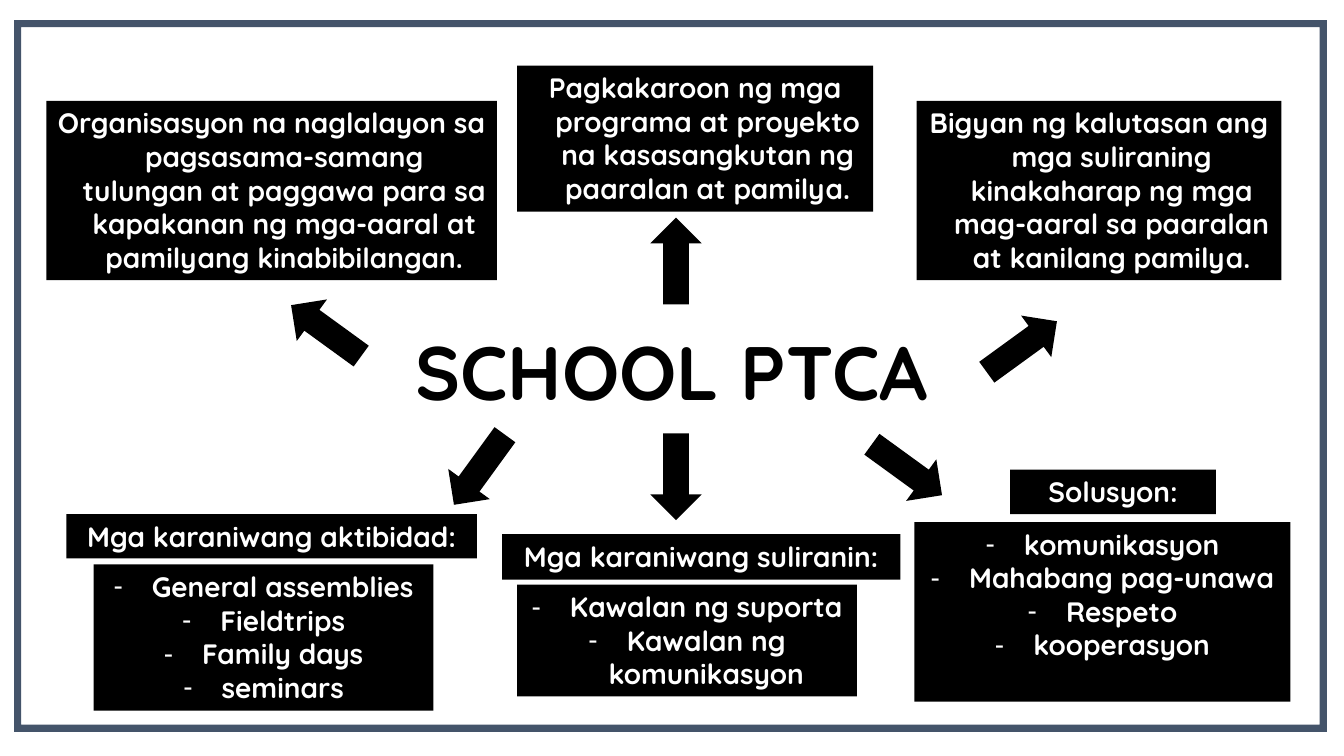
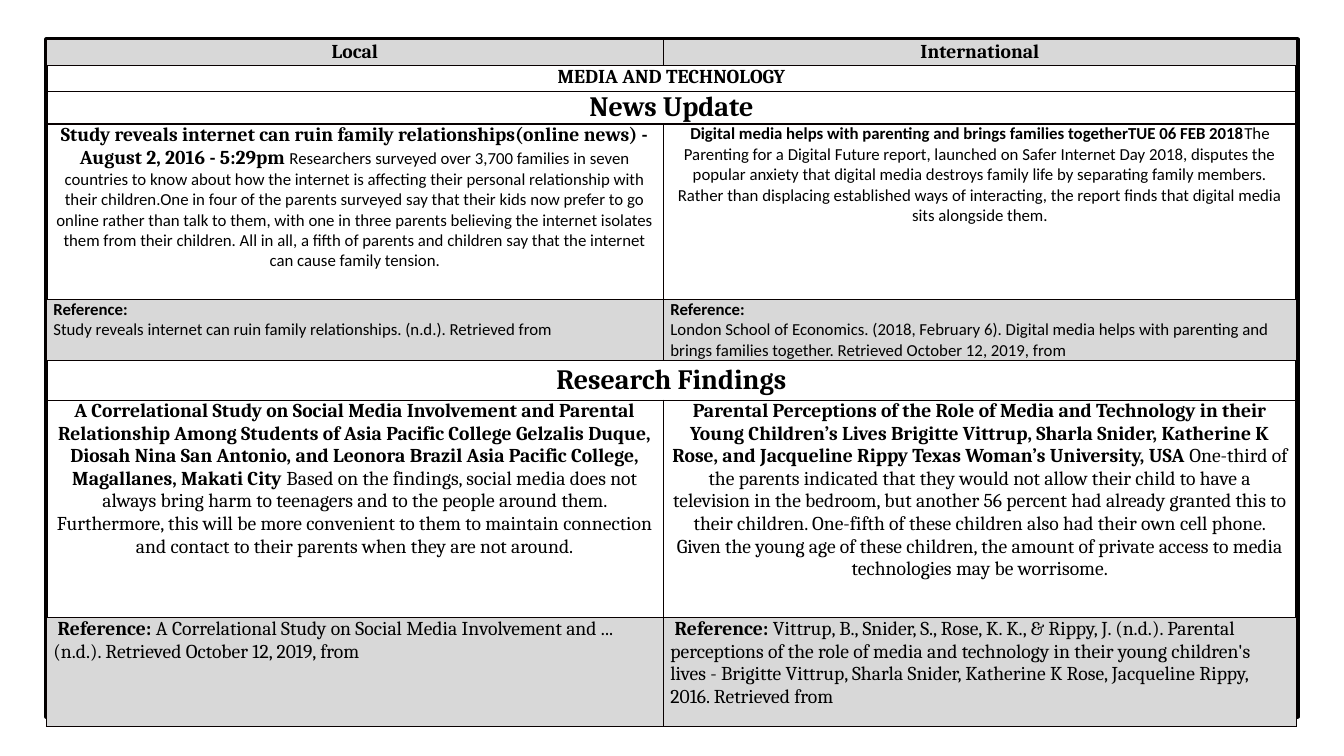
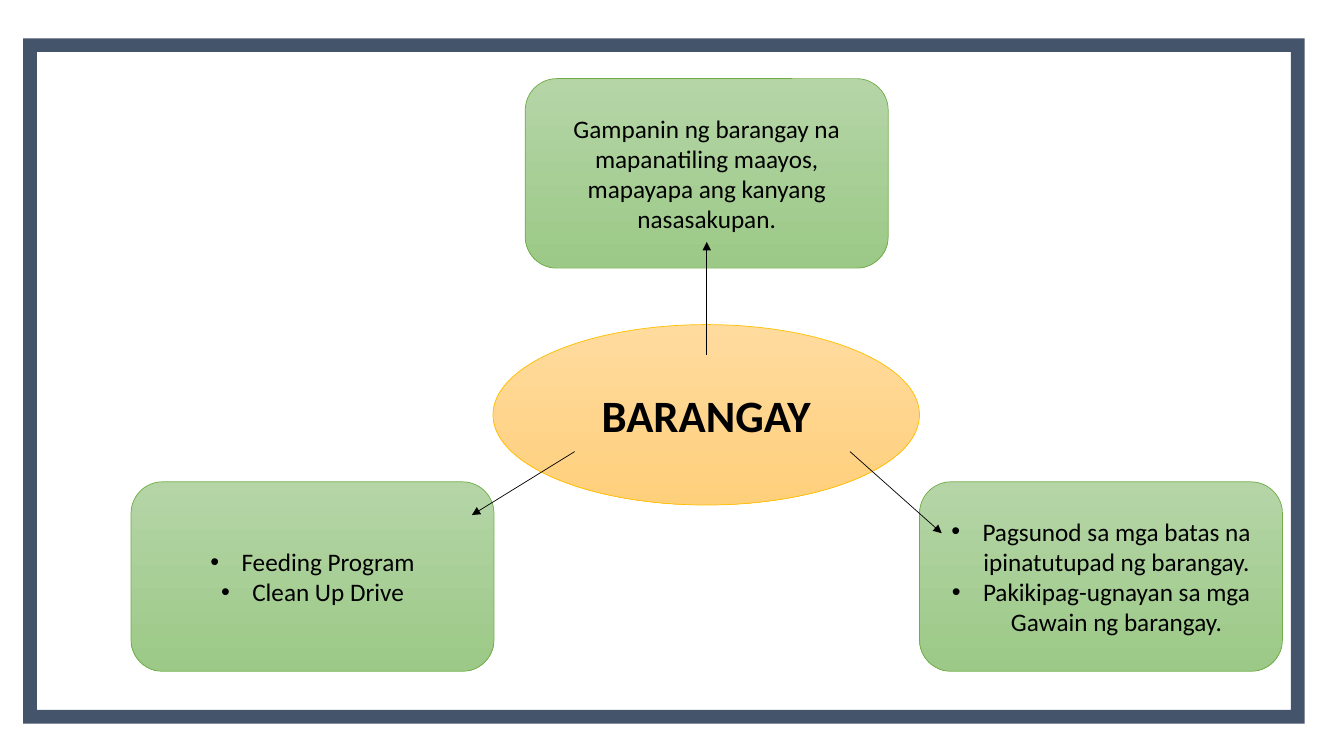
"""Build three slides on school, media and barangay support for families."""
from lxml import etree
from pptx import Presentation
from pptx.dml.color import RGBColor
from pptx.enum.shapes import MSO_CONNECTOR, MSO_SHAPE
from pptx.enum.text import MSO_ANCHOR, MSO_AUTO_SIZE, PP_ALIGN
from pptx.oxml.ns import qn
from pptx.util import Inches, Pt

COLORS = {
    "black": "000000",
    "white": "FFFFFF",
    "frame": "44546A",
    "shade": "D8D8D8",
    "border": "080000",
    "green_top": "B5D5A7",
    "green_bottom": "9CC987",
    "green_line": "70AD47",
    "gold_top": "FFDB9E",
    "gold_bottom": "FFD07C",
    "gold_line": "FFC000",
}
RGB = {name: RGBColor.from_string(value) for name, value in COLORS.items()}


def add_box(page, kind, place, fills=(), line=None, width=0.5):
    """Add a preset shape with no fill, a solid fill or a vertical gradient."""
    box = page.shapes.add_shape(kind, *[Inches(value) for value in place])
    box.shadow.inherit = False
    if len(fills) == 2:
        box.fill.gradient()
        box.fill.gradient_angle = 270
        for stop, name, position in zip(box.fill.gradient_stops, fills, (0, 1)):
            stop.color.rgb = RGB[name]
            stop.position = position
    elif fills:
        box.fill.solid()
        box.fill.fore_color.rgb = RGB[fills[0]]
    else:
        box.fill.background()
    if line:
        box.line.color.rgb = RGB[line]
        box.line.width = Pt(width)
    else:
        box.line.fill.background()
    return box


def write(box, lines, font, size, color, bold=False, anchor=MSO_ANCHOR.MIDDLE,
          indent=0, bullet=None):
    """Fill a shape with centred paragraphs, hanging or bulleted on request."""
    frame = box.text_frame
    frame.text = "\n".join(lines)
    frame.word_wrap = True
    frame.auto_size = MSO_AUTO_SIZE.NONE
    frame.vertical_anchor = anchor
    for para in frame.paragraphs:
        para.alignment = PP_ALIGN.CENTER
        properties = para._p.get_or_add_pPr()
        if indent:
            properties.set("marL", str(Inches(indent)))
            properties.set("indent", str(-Inches(indent)))
        if bullet:
            etree.SubElement(properties, qn("a:buFont"), typeface="Arial")
            etree.SubElement(properties, qn("a:buChar"), char=bullet)
        for span in para.runs:
            span.font.name = font
            span.font.size = Pt(size)
            span.font.bold = bold
            span.font.color.rgb = RGB[color]


deck = Presentation()
deck.slide_width = Inches(13.33)
deck.slide_height = Inches(7.5)
TITLE_ONLY, BLANK = deck.slide_layouts[5], deck.slide_layouts[6]

school = deck.slides.add_slide(TITLE_ONLY)
title = school.shapes.title
title.left, title.top = Inches(3.82), Inches(3.17)
title.width, title.height = Inches(5.68), Inches(1)
write(title, ["SCHOOL PTCA"], "Quicksand", 54, "black", True)

statements = [
    ((0.46, 1, 4.47, 1.78),
     "Organisasyon na naglalayon sa pagsasama-samang tulungan at paggawa para sa "
     "kapakanan ng mga-aaral at pamilyang kinabibilangan."),
    ((5.13, 0.65, 3.53, 1.45),
     "Pagkakaroon ng mga programa at proyekto na kasasangkutan ng paaralan at pamilya."),
    ((9.09, 1, 3.62, 1.78),
     "Bigyan ng kalutasan ang mga suliraning kinakaharap ng mga mag-aaral sa paaralan "
     "at kanilang pamilya."),
    ((0.66, 5.1, 4.07, 0.44), "Mga karaniwang aktibidad:"),
    ((4.98, 5.3, 3.95, 0.45), "Mga karaniwang suliranin:"),
    ((10.02, 4.66, 2.04, 0.44), "Solusyon:"),
]
lists = [
    ((0.93, 5.6, 3.37, 1.45),
     ["General assemblies", "Fieldtrips", "Family days", "seminars"]),
    ((5.13, 5.8, 3.37, 1.11), ["Kawalan ng suporta", "Kawalan ng komunikasyon"]),
    ((9.07, 5.18, 3.73, 1.78),
     ["komunikasyon", "Mahabang pag-unawa", "Respeto", "kooperasyon"]),
]
black_boxes = [(place, [text], 0.25, None) for place, text in statements]
black_boxes += [(place, items, 0.38, "-") for place, items in lists]
for place, lines, indent, bullet in black_boxes:
    box = add_box(school, MSO_SHAPE.RECTANGLE, place, ["black"])
    write(box, lines, "Quicksand", 20, "white", True, MSO_ANCHOR.TOP, indent, bullet)

arrows = [
    (2.98, 2.85, 306), (6.45, 2.16, 0), (9.88, 3.01, 54),
    (4.5, 4.23, 216), (6.45, 4.3, 180), (8.74, 4.23, 126),
]
for left, top, angle in arrows:
    arrow = add_box(school, MSO_SHAPE.UP_ARROW, (left, top, 0.51, 0.86), ["black"])
    arrow.rotation = angle

media = deck.slides.add_slide(BLANK)
add_box(media, MSO_SHAPE.RECTANGLE, (0.46, 0.39, 12.41, 6.72), line="black", width=3)

STYLES = {
    "heading": ("Cambria", 20, True),
    "strong": ("Cambria", 14, True),
    "body": ("Cambria", 14, False),
    "small strong": ("Calibri", 12, True),
    "small": ("Calibri", 12, False),
}
table_rows = [
    (0.26, "shade", PP_ALIGN.CENTER, [
        [[("Local", "strong")]],
        [[("International", "strong")]],
    ]),
    (0.26, None, PP_ALIGN.CENTER, [[[("MEDIA AND TECHNOLOGY", "strong")]]]),
    (0.26, None, PP_ALIGN.CENTER, [[[("News Update", "heading")]]]),
    (1.74, None, PP_ALIGN.CENTER, [
        [[("Study reveals internet can ruin family relationships(online news) - "
           "August 2, 2016 - 5:29pm ", "strong"),
          ("Researchers surveyed over 3,700 families in seven countries to know about "
           "how the internet is affecting their personal relationship with their "
           "children.One in four of the parents surveyed say that their kids now prefer "
           "to go online rather than talk to them, with one in three parents believing "
           "the internet isolates them from their children. All in all, a fifth of "
           "parents and children say that the internet can cause family tension.",
           "small")]],
        [[("Digital media helps with parenting and brings families together"
           "TUE 06 FEB 2018", "small strong"),
          ("The Parenting for a Digital Future report, launched on Safer Internet Day "
           "2018, disputes the popular anxiety that digital media destroys family life "
           "by separating family members. Rather than displacing established ways of "
           "interacting, the report finds that digital media sits alongside them.",
           "small")]],
    ]),
    (0.58, "shade", PP_ALIGN.LEFT, [
        [[("Reference:", "small strong")],
         [("Study reveals internet can ruin family relationships. (n.d.). Retrieved from",
           "small")]],
        [[("Reference:", "small strong")],
         [("London School of Economics. (2018, February 6). Digital media helps with "
           "parenting and brings families together. Retrieved October 12, 2019, from",
           "small")]],
    ]),
    (0.39, None, PP_ALIGN.CENTER, [[[("Research Findings", "heading")]]]),
    (2.16, None, PP_ALIGN.CENTER, [
        [[("A Correlational Study on Social Media Involvement and Parental Relationship "
           "Among Students of Asia Pacific College Gelzalis Duque, Diosah Nina San "
           "Antonio, and Leonora Brazil Asia Pacific College, Magallanes, Makati City",
           "strong"),
          (" Based on the findings, social media does not always bring harm to teenagers "
           "and to the people around them. Furthermore, this will be more convenient to "
           "them to maintain connection and contact to their parents when they are not "
           "around.", "body")]],
        [[("Parental Perceptions of the Role of Media and Technology in their Young "
           "Children’s Lives Brigitte Vittrup, Sharla Snider, Katherine K Rose, and "
           "Jacqueline Rippy Texas Woman’s University, USA", "strong"),
          (" One-third of the parents indicated that they would not allow their child to "
           "have a television in the bedroom, but another 56 percent had already granted "
           "this to their children. One-fifth of these children also had their own cell "
           "phone. Given the young age of these children, the amount of private access "
           "to media technologies may be worrisome.", "body")]],
    ]),
    (1.08, "shade", PP_ALIGN.LEFT, [
        [[(" Reference:", "strong"),
          (" A Correlational Study on Social Media Involvement and ... (n.d.). Retrieved "
           "October 12, 2019, from", "body")]],
        [[(" Reference:", "strong"),
          (" Vittrup, B., Snider, S., Rose, K. K., & Rippy, J. (n.d.). Parental "
           "perceptions of the role of media and technology in their young children's "
           "lives - Brigitte Vittrup, Sharla Snider, Katherine K Rose, Jacqueline Rippy, "
           "2016. Retrieved from", "body")]],
    ]),
]
MIDDLE_ROWS = (0, 5)
table = media.shapes.add_table(
    len(table_rows), 2, Inches(0.46), Inches(0.39), Inches(12.4), Inches(6.73)).table
table.first_row = False
table.horz_banding = False
table.columns[0].width = Inches(6.12)
table.columns[1].width = Inches(6.28)

for row_index, (height, fill, alignment, contents) in enumerate(table_rows):
    table.rows[row_index].height = Inches(height)
    cells = [table.cell(row_index, column) for column in range(2)]
    for cell in cells:
        cell.margin_left = cell.margin_right = Inches(0.07)
        cell.margin_top = cell.margin_bottom = 0
        if row_index in MIDDLE_ROWS:
            cell.vertical_anchor = MSO_ANCHOR.MIDDLE
        for side in ("lnL", "lnR", "lnT", "lnB"):
            border = etree.SubElement(
                cell._tc.get_or_add_tcPr(), qn(f"a:{side}"), w=str(Pt(1)))
            paint = etree.SubElement(border, qn("a:solidFill"))
            etree.SubElement(paint, qn("a:srgbClr"), val=COLORS["border"])
        if fill:
            cell.fill.solid()
            cell.fill.fore_color.rgb = RGB[fill]
        else:
            cell.fill.background()
    if len(contents) == 1:
        cells[0].merge(cells[1])
    for cell, paragraphs in zip(cells, contents):
        frame = cell.text_frame
        for index, spans in enumerate(paragraphs):
            para = frame.add_paragraph() if index else frame.paragraphs[0]
            para.alignment = alignment
            for text, style in spans:
                span = para.add_run()
                span.text = text
                font, size, bold = STYLES[style]
                span.font.name = font
                span.font.size = Pt(size)
                span.font.bold = bold
                span.font.color.rgb = RGB["black"]

barangay = deck.slides.add_slide(BLANK)
hub = add_box(barangay, MSO_SHAPE.OVAL, (4.89, 3.22, 4.23, 1.79),
              ["gold_top", "gold_bottom"], "gold_line")
write(hub, ["BARANGAY"], "Calibri", 32, "black", True)

roles = [
    (1.3, 4.78, ["Feeding Program", "Clean Up Drive"], 0.31, "•"),
    (9.12, 4.78, ["Pagsunod sa mga batas na ipinatutupad ng barangay.",
                  "Pakikipag-ugnayan sa mga Gawain ng barangay."], 0.31, "•"),
    (5.21, 0.78, ["Gampanin ng barangay na mapanatiling maayos, mapayapa ang kanyang "
                  "nasasakupan."], 0, None),
]
for left, top, lines, indent, bullet in roles:
    box = add_box(barangay, MSO_SHAPE.ROUNDED_RECTANGLE, (left, top, 3.6, 1.88),
                  ["green_top", "green_bottom"], "green_line")
    write(box, lines, "Calibri", 18, "black", indent=indent, bullet=bullet)

for ends in [(5.7, 4.48, 4.68, 5.11), (8.43, 4.48, 9.34, 5.29), (7.01, 3.52, 7.01, 2.4)]:
    link = barangay.shapes.add_connector(
        MSO_CONNECTOR.STRAIGHT, *[Inches(value) for value in ends])
    link.line.color.rgb = RGB["black"]
    link.line.width = Pt(0.5)
    etree.SubElement(link.line._get_or_add_ln(), qn("a:tailEnd"), type="triangle")
    etree.SubElement(link._element.spPr, qn("a:effectLst"))

for page, place, thickness in [
    (school, (0.14, 0.2, 13.02, 7.06), 0.01),
    (barangay, (0.23, 0.38, 12.71, 6.8), 0.02),
]:
    border_frame = add_box(page, MSO_SHAPE.FRAME, place, ["frame"])
    border_frame.adjustments[0] = thickness

deck.save("out.pptx")
